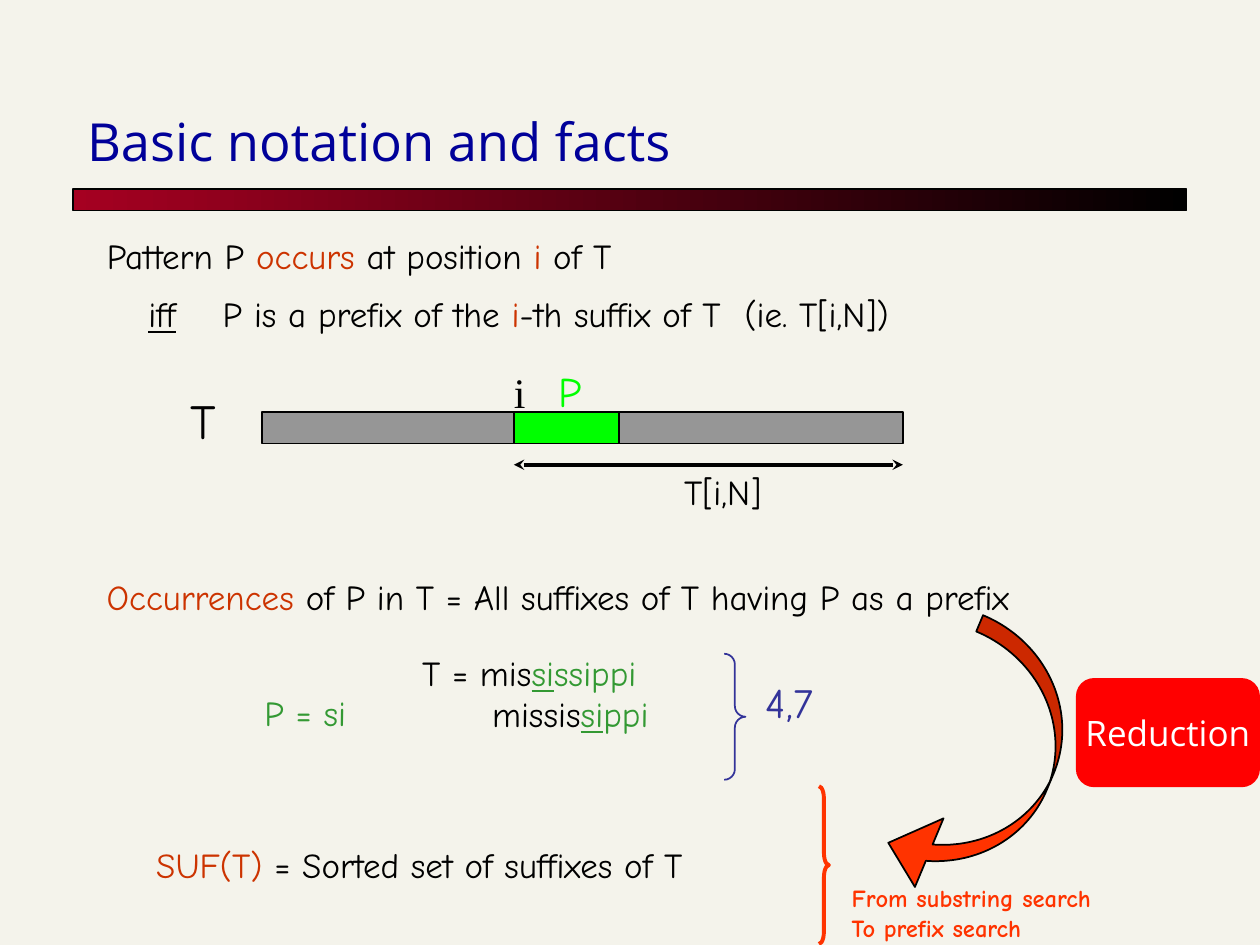
import pptx
import pptx.util
import pptx.dml.color
import pptx.enum.shapes
import pptx.enum.text
import pptx.oxml
import pptx.oxml.ns

Cm = pptx.util.Cm
Pt = pptx.util.Pt
SHAPE = pptx.enum.shapes.MSO_SHAPE
ANCHOR = pptx.enum.text.MSO_ANCHOR
ALIGN = pptx.enum.text.PP_ALIGN
FIT = pptx.enum.text.MSO_AUTO_SIZE

COLORS = {
    "paper": "F4F3EB", "title": "000099", "wine": "A50021", "black": "000000",
    "rust": "CC3300", "leaf": "339933", "indigo": "333399", "gray": "969696",
    "lime": "00FF00", "orange": "FF3300", "red": "FF0000", "white": "FFFFFF",
}
HAND = "Comic Neue"
SANS = "Open Sans"
SERIF = "Times New Roman"


def rgb(name):
    return pptx.dml.color.RGBColor.from_string(COLORS[name])


def add_xml(parent, tag, inner=""):
    ns = pptx.oxml.ns.nsdecls("a")
    parent.append(pptx.oxml.parse_xml(f"<a:{tag} {ns}>{inner}</a:{tag}>"))


def place(sp, box):
    sp.left, sp.top, sp.width, sp.height = (Cm(v) for v in box)


def style_run(r, color, size, font=HAND, bold=False, underline=False):
    r.font.name = font
    r.font.size = Pt(size)
    r.font.bold = bold
    r.font.underline = underline
    r.font.color.rgb = rgb(color)


def write_runs(p, parts, size=20):
    for text, color, *underline in parts:
        r = p.add_run()
        r.text = text
        style_run(r, color, size, underline=bool(underline))


def set_indent(p, cm):
    pPr = p._p.get_or_add_pPr()
    pPr.set("marL", str(Cm(cm)))
    pPr.set("indent", "0")
    return pPr


def add_box(s, box, wrap):
    tf = s.shapes.add_textbox(*(Cm(v) for v in box)).text_frame
    tf.word_wrap = wrap
    tf.auto_size = FIT.NONE if wrap else FIT.SHAPE_TO_FIT_TEXT
    return tf


def add_label(s, box, text, color, size, font=HAND, bold=False):
    tf = add_box(s, box, False)
    tf.text = text
    for p in tf.paragraphs:
        for r in p.runs:
            style_run(r, color, size, font, bold)


def add_statement(s, box, parts):
    p = add_box(s, box, True).paragraphs[0]
    p.space_before = Pt(4)
    write_runs(p, parts)


def add_condition(s, box, parts, tabs):
    p = add_box(s, box, False).paragraphs[0]
    p.space_before = Pt(4)
    stops = "".join(f'<a:tab pos="{Cm(t)}" algn="l"/>' for t in tabs)
    add_xml(p._p.get_or_add_pPr(), "tabLst", stops)
    write_runs(p, parts)


def add_suffixes(s, box, lines):
    tf = add_box(s, box, True)
    for i, (indent, spacing, parts) in enumerate(lines):
        p = tf.add_paragraph() if i else tf.paragraphs[0]
        set_indent(p, indent)
        p.line_spacing = spacing
        p.space_before = Pt(2)
        write_runs(p, parts)


def add_figure(s, kind, box, fill=None, line=None, weight=1, adj=()):
    sp = s.shapes.add_shape(kind, *(Cm(v) for v in box))
    sp.shadow.inherit = False
    for i, value in enumerate(adj):
        sp.adjustments[i] = value
    if fill:
        sp.fill.solid()
        sp.fill.fore_color.rgb = rgb(fill)
    else:
        sp.fill.background()
    if line:
        sp.line.color.rgb = rgb(line)
        sp.line.width = Pt(weight)
    else:
        sp.line.fill.background()
    return sp


def add_title_bar(s):
    sp = add_figure(s, SHAPE.RECTANGLE, (1.47, 3.81, 22.45, 0.43), line="black", weight=0.75)
    sp.fill.gradient()
    sp.fill.gradient_angle = 0
    for stop, color, position in zip(sp.fill.gradient_stops, ("wine", "black"), (0, 1)):
        stop.color.rgb = rgb(color)
        stop.position = position


def add_span(s, x1, x2, y):
    cn = s.shapes.add_connector(
        pptx.enum.shapes.MSO_CONNECTOR.STRAIGHT, Cm(x1), Cm(y), Cm(x2), Cm(y))
    cn.line.color.rgb = rgb("black")
    cn.line.width = Pt(2)
    ln = cn.line._get_or_add_ln()
    for tag in ("headEnd", "tailEnd"):
        add_xml(ln, tag)
        ln[-1].set("type", "stealth")
    add_xml(cn._element.spPr, "effectLst")


def fill_title(s, text):
    sp = s.shapes.title
    place(sp, (1.5, 2.13, 21.59, 1.47))
    tf = sp.text_frame
    tf.text = text
    tf.auto_size = FIT.NONE
    tf.vertical_anchor = ANCHOR.BOTTOM
    p = tf.paragraphs[0]
    p.alignment = ALIGN.LEFT
    style_run(p.runs[0], "title", 30, SANS)


def fill_body(s, parts):
    sp = s.placeholders[1]
    place(sp, (1.9, 4.7, 16.3, 1.07))
    tf = sp.text_frame
    tf.auto_size = FIT.NONE
    p = tf.paragraphs[0]
    p.line_spacing = 0.9
    p.space_before = Pt(4)
    add_xml(set_indent(p, 0), "buNone")
    write_runs(p, parts)


def add_badge(s, box, text):
    sp = add_figure(s, SHAPE.ROUNDED_RECTANGLE, box, "red")
    tf = sp.text_frame
    tf.text = text
    tf.word_wrap = False
    tf.vertical_anchor = ANCHOR.MIDDLE
    p = tf.paragraphs[0]
    p.alignment = ALIGN.CENTER
    style_run(p.runs[0], "white", 20, SANS)


def main():
    prs = pptx.Presentation()
    prs.slide_width, prs.slide_height = Cm(25.4), Cm(19.05)
    s = prs.slides.add_slide(prs.slide_layouts[1])
    s.background.fill.solid()
    s.background.fill.fore_color.rgb = rgb("paper")

    add_title_bar(s)
    fill_title(s, "Basic notation and facts")
    fill_body(s, [("Pattern P ", "black"), ("occurs", "rust"), (" at position ", "black"),
                  ("i", "rust"), (" of T", "black")])
    add_condition(s, (2.74, 5.77, 17.73, 1.09),
                  [("iff", "black", True), ("\tP is a prefix of the ", "black"),
                   ("i", "rust"), ("-th suffix of T\t(ie. T[i,N])", "black")], (1.5, 12.02))

    add_figure(s, SHAPE.RECTANGLE, (5.28, 8.3, 12.92, 0.64), "gray", "black")
    add_figure(s, SHAPE.RECTANGLE, (10.36, 8.3, 2.12, 0.64), "lime", "black")
    add_label(s, (3.6, 7.75, 1.19, 1.45), "T", "black", 28)
    add_label(s, (11, 7.24, 0.97, 1.27), "P", "lime", 24)
    add_label(s, (10.11, 7.26, 0.74, 1.27), "i", "black", 24, SERIF)
    add_span(s, 10.36, 18.2, 9.37)
    add_label(s, (13.54, 9.37, 2.49, 1.09), "T[i,N]", "black", 20)

    add_statement(s, (1.9, 11.48, 22.66, 1.27),
                  [("Occurrences", "rust"),
                   (" of P in T = All suffixes of T having P as a prefix", "black")])
    add_suffixes(s, (5.72, 13.18, 13.54, 1.78), [
        (2.54, 0.8, [("T = mis", "black"), ("si", "leaf", True), ("ssippi", "leaf")]),
        (3.95, 0.9, [("missis", "black"), ("si", "leaf", True), ("ppi", "leaf")])])
    add_label(s, (5.08, 13.82, 2.21, 1.09), "P = si", "leaf", 20)
    add_figure(s, SHAPE.RIGHT_BRACE, (14.6, 13.18, 0.43, 2.54), line="indigo", adj=(0.5, 0.5))
    add_label(s, (15.19, 13.51, 1.78, 1.27), "4,7", "indigo", 24)

    add_statement(s, (2.9, 16.87, 13.61, 1.5),
                  [("SUF(T) ", "rust"), ("= Sorted set of suffixes of T", "black")])
    add_figure(s, SHAPE.RIGHT_BRACE, (16.51, 15.85, 0.2, 3.18), line="orange",
               weight=2.25, adj=(1.25, 0.5))
    arrow = add_figure(s, SHAPE.CURVED_LEFT_ARROW, (18.62, 12.67, 2.54, 5.72), "orange",
                       "black", adj=(0.14, 0.59, 0.33))
    arrow.rotation = 22.6
    add_label(s, (16.92, 17.68, 5.87, 1.45), "From substring search\nTo prefix search",
              "orange", 14, bold=True)
    add_badge(s, (21.69, 13.67, 3.71, 2.2), "Reduction")
    prs.save("out.pptx")


if __name__ == "__main__":
    main()
